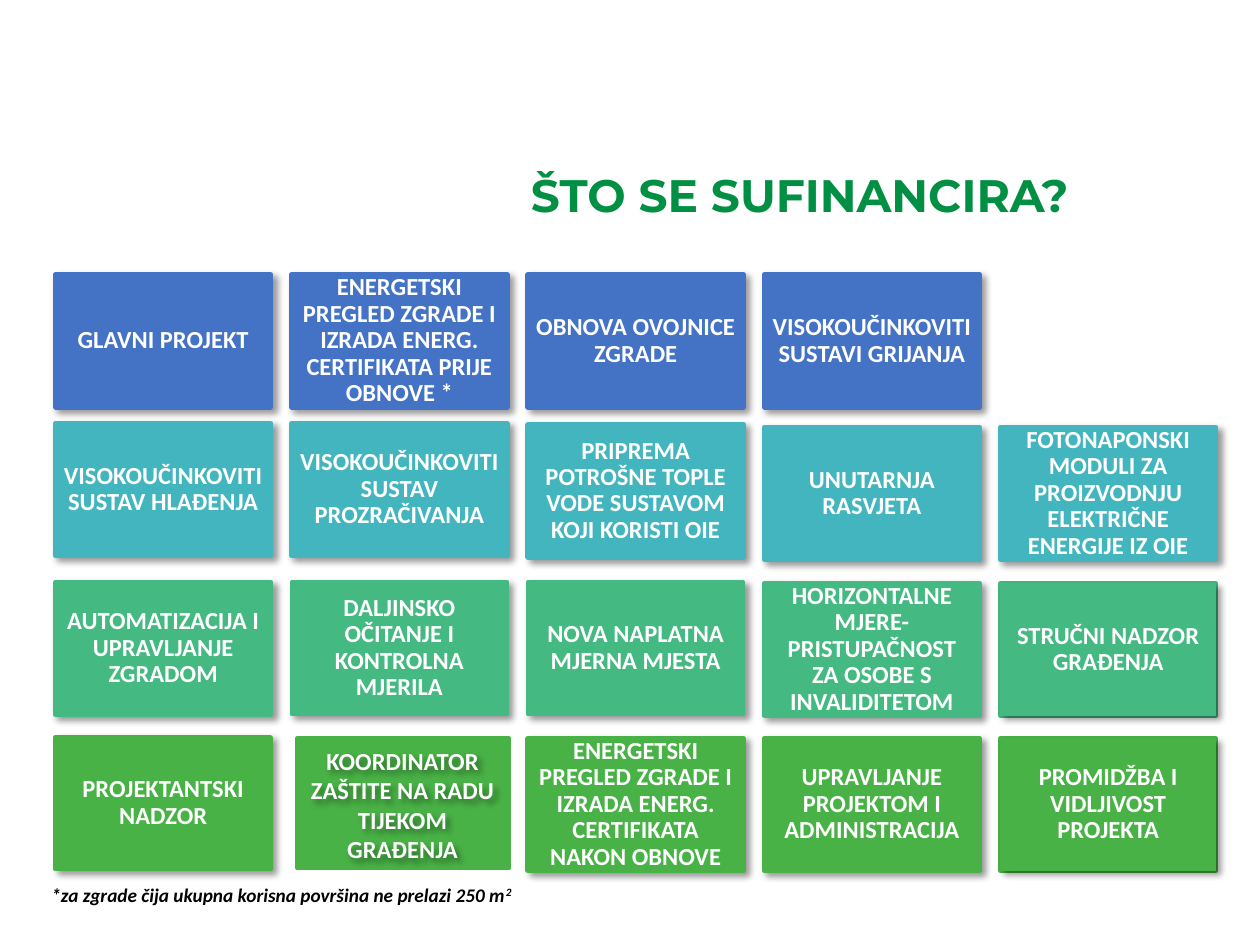
from dataclasses import dataclass
from lxml.etree import SubElement
from pptx import Presentation
from pptx.dml.color import RGBColor
from pptx.enum.shapes import MSO_SHAPE as Preset
from pptx.enum.text import MSO_ANCHOR as Anchor, MSO_AUTO_SIZE as AutoSize, PP_ALIGN as Align
from pptx.oxml.ns import qn
from pptx.util import Inches, Pt

WHITE, BLACK, TITLE_GREEN = "FFFFFF", "000000", "008F43"
GRID_LEFT, COLUMN_STEP = 0.44, 1.875
CARD_WIDTH, CARD_HEIGHT, CARD_INSET = 1.71, 1.05, 0.06


@dataclass(frozen=True)
class Card:
    text: str
    column: int
    drop: float = 0
    outline: float = 3
    plate: bool = False


@dataclass(frozen=True)
class Row:
    top: float
    color: str
    cards: tuple[Card, ...]


ROWS = (
    Row(2.18, "4472C4", (
        Card("GLAVNI PROJEKT", 0),
        Card("ENERGETSKI PREGLED ZGRADE I IZRADA ENERG. CERTIFIKATA PRIJE OBNOVE *", 1),
        Card("OBNOVA OVOJNICE ZGRADE", 2),
        Card("VISOKOUČINKOVITI SUSTAVI GRIJANJA", 3),
    )),
    Row(3.36, "43B5BF", (
        Card("VISOKOUČINKOVITI\vSUSTAV HLAĐENJA", 0),
        Card("VISOKOUČINKOVITI\vSUSTAV PROZRAČIVANJA", 1),
        Card("PRIPREMA POTROŠNE TOPLE VODE SUSTAVOM KOJI KORISTI OIE", 2, drop=0.01),
        Card("UNUTARNJA RASVJETA", 3, drop=0.03),
        Card("FOTONAPONSKI MODULI ZA PROIZVODNJU ELEKTRIČNE ENERGIJE IZ OIE", 4, drop=0.03),
    )),
    Row(4.62, "44B982", (
        Card("AUTOMATIZACIJA I UPRAVLJANJE ZGRADOM", 0),
        Card("DALJINSKO OČITANJE I KONTROLNA MJERILA", 1, outline=2.25),
        Card("NOVA NAPLATNA MJERNA MJESTA", 2, outline=2.25),
        Card("HORIZONTALNE MJERE- PRISTUPAČNOST ZA OSOBE S INVALIDITETOM", 3, drop=0.01),
        Card("STRUČNI NADZOR GRAĐENJA", 4, drop=0.01, outline=0.75, plate=True),
    )),
    Row(5.86, "49B246", (
        Card("PROJEKTANTSKI\nNADZOR", 0, drop=-0.01, outline=2.25),
        Card("ENERGETSKI PREGLED ZGRADE I IZRADA ENERG. CERTIFIKATA NAKON OBNOVE", 2),
        Card("UPRAVLJANJE PROJEKTOM I ADMINISTRACIJA", 3),
        Card("PROMIDŽBA I VIDLJIVOST PROJEKTA", 4, outline=0.75, plate=True),
    )),
)


def rgb(color: str) -> RGBColor:
    return RGBColor.from_string(color)


def format_text(frame, size: float, color: str, font: str = "Calibri",
                align=Align.CENTER, spacing: float = 1, italic: bool = False) -> None:
    for para in frame.paragraphs:
        para.alignment = align
        para.line_spacing = spacing
        for span in para.runs:
            span.font.name = font
            span.font.size = Pt(size)
            span.font.bold = True
            span.font.italic = italic
            span.font.color.rgb = rgb(color)


def add_drop_shadow(box) -> None:
    box.shadow.inherit = False
    effects = box._element.spPr.find(qn("a:effectLst"))
    shadow = SubElement(effects, qn("a:outerShdw"), blurRad=str(Pt(4)), dist=str(Pt(3)),
                        dir="2700000", algn="tl", rotWithShape="0")
    tint = SubElement(shadow, qn("a:srgbClr"), val=BLACK)
    SubElement(tint, qn("a:alpha"), val="40000")


def add_block(page, left: float, top: float, width: float, height: float,
              color: str, outline: float):
    box = page.shapes.add_shape(Preset.RECTANGLE, Inches(left), Inches(top),
                                Inches(width), Inches(height))
    box.shadow.inherit = False
    box.fill.solid()
    box.fill.fore_color.rgb = rgb(color)
    box.line.color.rgb = rgb(color)
    box.line.width = Pt(outline)
    return box


def add_card(page, row: Row, card: Card) -> None:
    place = (GRID_LEFT + card.column * COLUMN_STEP, row.top + card.drop, CARD_WIDTH, CARD_HEIGHT)
    if card.plate:
        add_block(page, *place, row.color, 3)
    box = add_block(page, *place, row.color, card.outline)
    add_drop_shadow(box)
    frame = box.text_frame
    frame.word_wrap = True
    frame.vertical_anchor = Anchor.MIDDLE
    frame.margin_left = frame.margin_right = Inches(CARD_INSET)
    frame.margin_top = frame.margin_bottom = Inches(CARD_INSET)
    frame.text = card.text
    format_text(frame, 14, WHITE, spacing=0.9)


def add_label(page, left: float, top: float, width: float, height: float, text: str):
    box = page.shapes.add_textbox(Inches(left), Inches(top), Inches(width), Inches(height))
    box.text_frame.word_wrap = True
    box.text_frame.auto_size = AutoSize.SHAPE_TO_FIT_TEXT
    box.text_frame.text = text
    return box


def add_title(page) -> None:
    title = page.shapes.title
    title.left, title.top = Inches(1.85), Inches(0.92)
    title.width, title.height = Inches(9), Inches(1.25)
    title.text_frame.text = "ŠTO SE SUFINANCIRA?"
    title.text_frame.vertical_anchor = Anchor.MIDDLE
    format_text(title.text_frame, 26, TITLE_GREEN, font="Montserrat")


def add_coordinator(page) -> None:
    add_block(page, 2.36, 5.86, 1.68, 1.03, ROWS[-1].color, 2.25)
    label = add_label(page, 2.31, 5.87, 1.77, 1.04, "KOORDINATOR ZAŠTITE NA RADU TIJEKOM GRAĐENJA")
    add_drop_shadow(label)
    format_text(label.text_frame, 14, WHITE)


def add_footnote(page) -> None:
    note = add_label(page, 0.31, 6.96, 5, 0.29,
                     "*za zgrade čija ukupna korisna površina ne prelazi 250 m")
    exponent = note.text_frame.paragraphs[0].add_run()
    exponent.text = "2"
    format_text(note.text_frame, 11, BLACK, align=Align.LEFT, italic=True)
    exponent._r.get_or_add_rPr().set("baseline", "30000")


def main() -> None:
    deck = Presentation()
    deck.slide_width, deck.slide_height = Inches(10), Inches(7.5)
    page = deck.slides.add_slide(deck.slide_layouts[5])
    add_title(page)
    for row in ROWS:
        for card in row.cards:
            add_card(page, row, card)
    add_coordinator(page)
    add_footnote(page)
    deck.save("out.pptx")


if __name__ == "__main__":
    main()
